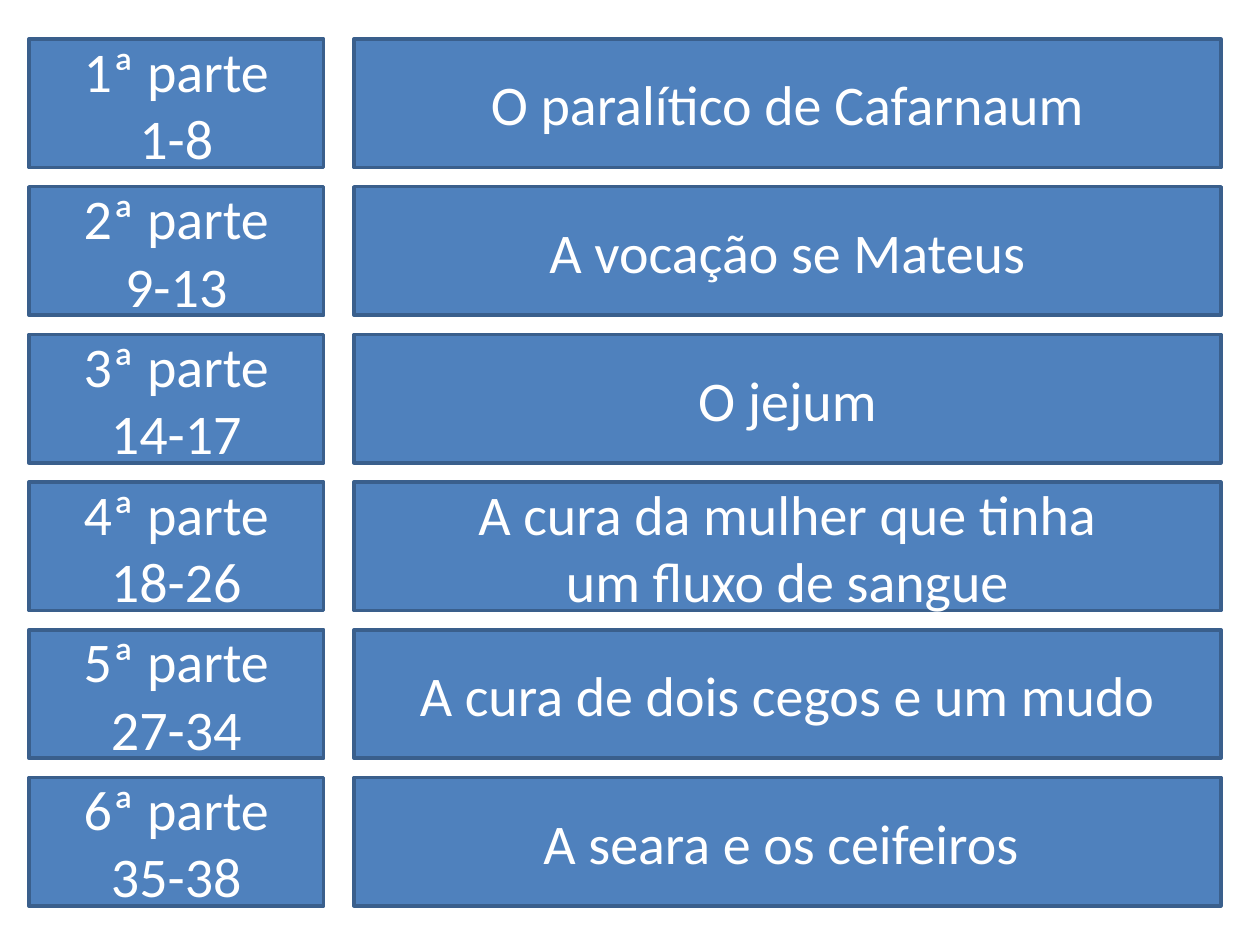
from pptx import Presentation
from pptx import util as u
from pptx.dml.color import RGBColor
from pptx.enum import shapes, text

BLUE = RGBColor(0x4F, 0x81, 0xBD)
DARK_BLUE = RGBColor(0x3A, 0x5F, 0x8C)
WHITE = RGBColor(0xFF, 0xFF, 0xFF)

FIRST_TOP, LAST_TOP, ROW_HEIGHT = 0.31, 6.17, 1.02
PART_LEFT, PART_WIDTH = 0.23, 2.34
TITLE_LEFT, TITLE_WIDTH = 2.81, 6.88

PARTS = [
    ("1-8", ["O paralítico de Cafarnaum"]),
    ("9-13", ["A vocação se Mateus"]),
    ("14-17", ["O jejum"]),
    ("18-26", ["A cura da mulher que tinha", "um fluxo de sangue"]),
    ("27-34", ["A cura de dois cegos e um mudo"]),
    ("35-38", ["A seara e os ceifeiros "]),
]


class Painter:
    font = "Calibri"
    size = u.Pt(32)
    line_width = u.Pt(2)

    def __init__(self, page):
        self.page = page

    def box(self, left, top, width, height, lines):
        box = self.page.shapes.add_shape(
            shapes.MSO_SHAPE.RECTANGLE,
            u.Inches(left), u.Inches(top), u.Inches(width), u.Inches(height))
        box.shadow.inherit = False
        box.fill.solid()
        box.fill.fore_color.rgb = BLUE
        box.line.color.rgb = DARK_BLUE
        box.line.width = self.line_width
        frame = box.text_frame
        frame.word_wrap = True
        frame.vertical_anchor = text.MSO_ANCHOR.MIDDLE
        for index, line in enumerate(lines):
            para = frame.add_paragraph() if index else frame.paragraphs[0]
            para.alignment = text.PP_ALIGN.CENTER
            span = para.add_run()
            span.text = line
            span.font.name = self.font
            span.font.size = self.size
            span.font.color.rgb = WHITE


def main():
    deck = Presentation()
    deck.slide_width = u.Inches(10)
    deck.slide_height = u.Inches(7.5)
    painter = Painter(deck.slides.add_slide(deck.slide_layouts[6]))
    pitch = (LAST_TOP - FIRST_TOP) / (len(PARTS) - 1)
    for row, (verses, title) in enumerate(PARTS):
        top = FIRST_TOP + row * pitch
        painter.box(PART_LEFT, top, PART_WIDTH, ROW_HEIGHT,
                    [f"{row + 1}ª parte", verses])
        painter.box(TITLE_LEFT, top, TITLE_WIDTH, ROW_HEIGHT, title)
    deck.save("out.pptx")


if __name__ == "__main__":
    main()
